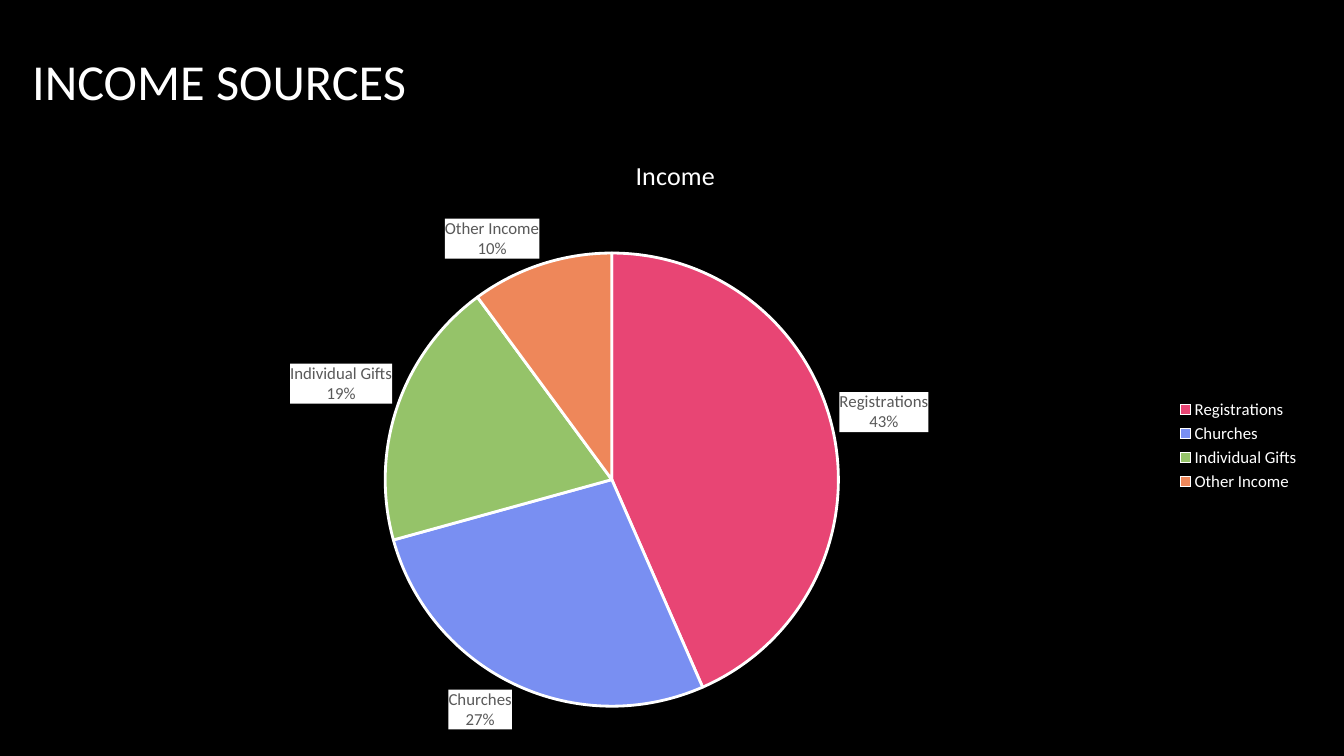
from dataclasses import dataclass

from lxml import etree
from pptx import Presentation
from pptx.chart.chart import Chart
from pptx.chart.data import CategoryChartData
from pptx.dml.color import RGBColor
from pptx.enum.chart import XL_CHART_TYPE, XL_LABEL_POSITION, XL_LEGEND_POSITION
from pptx.enum.text import MSO_ANCHOR
from pptx.oxml import parse_xml
from pptx.oxml.ns import nsdecls, qn
from pptx.slide import Slide
from pptx.text.text import Font
from pptx.util import Pt

PIE = XL_CHART_TYPE.PIE
OUTSIDE_END = XL_LABEL_POSITION.OUTSIDE_END
LEGEND_RIGHT = XL_LEGEND_POSITION.RIGHT
MIDDLE = MSO_ANCHOR.MIDDLE

BLACK = RGBColor(0x00, 0x00, 0x00)
WHITE = RGBColor(0xFF, 0xFF, 0xFF)
GREY = RGBColor(0x59, 0x59, 0x59)
PINK = RGBColor(0xE8, 0x45, 0x74)
BLUE = RGBColor(0x79, 0x8F, 0xF2)
GREEN = RGBColor(0x95, 0xC3, 0x69)
ORANGE = RGBColor(0xEE, 0x87, 0x5A)
FONT_NAME = "Calibri"


@dataclass(frozen=True)
class Source:
    name: str
    share: int
    color: RGBColor


@dataclass(frozen=True)
class Frame:
    left: float
    top: float
    width: float
    height: float

    def lengths(self) -> tuple[Pt, Pt, Pt, Pt]:
        return Pt(self.left), Pt(self.top), Pt(self.width), Pt(self.height)


SOURCES = [
    Source("Registrations", 43, PINK),
    Source("Churches", 27, BLUE),
    Source("Individual Gifts", 19, GREEN),
    Source("Other Income", 10, ORANGE),
]
TITLE_FRAME = Frame(15.84, 0, 797.76, 114.48)
CHART_FRAME = Frame(28.8, 96.5, 907.2, 443.5)
# Pie square as fractions of the chart frame
PIE_AREA = {"x": 0.27, "y": 0.19, "w": 0.36, "h": 0.73}


def set_font(font: Font, size: float, color: RGBColor) -> None:
    font.name = FONT_NAME
    font.size = Pt(size)
    font.bold = False
    font.color.rgb = color


def add_text(page: Slide, text: str, frame: Frame, *, size: float, color: RGBColor) -> None:
    box = page.shapes.add_textbox(*frame.lengths())
    box.text_frame.word_wrap = True
    box.text_frame.vertical_anchor = MIDDLE
    span = box.text_frame.paragraphs[0].add_run()
    span.text = text
    set_font(span.font, size, color)


def place_pie(chart: Chart) -> None:
    """Fix the inner plot area within the chart frame."""
    plot_area = chart.plots[0]._element.getparent()
    for old_layout in plot_area.findall(qn("c:layout")):
        plot_area.remove(old_layout)
    sizes = "".join(f'<c:{key} val="{value}"/>' for key, value in PIE_AREA.items())
    plot_area.insert(0, parse_xml(
        f'<c:layout {nsdecls("c")}><c:manualLayout><c:layoutTarget val="inner"/>'
        f'<c:xMode val="edge"/><c:yMode val="edge"/>{sizes}</c:manualLayout></c:layout>'))


def add_income_chart(page: Slide, sources: list[Source]) -> None:
    data = CategoryChartData()
    data.categories = [source.name for source in sources]
    data.add_series("Income", [source.share for source in sources])
    chart = page.shapes.add_chart(PIE, *CHART_FRAME.lengths(), data).chart
    set_font(chart.font, 10, WHITE)
    place_pie(chart)

    # Heading and legend
    chart.has_title = True
    span = chart.chart_title.text_frame.paragraphs[0].add_run()
    span.text = "Income"
    set_font(span.font, 18.6, WHITE)
    chart.has_legend = True
    chart.legend.position = LEGEND_RIGHT
    chart.legend.include_in_layout = False
    set_font(chart.legend.font, 12, WHITE)

    # Slices
    plot = chart.plots[0]
    plot.vary_by_categories = True
    series = plot.series[0]
    for index, source in enumerate(sources):
        slice_format = series.points[index].format
        slice_format.fill.solid()
        slice_format.fill.fore_color.rgb = source.color
        slice_format.line.color.rgb = WHITE
        slice_format.line.width = Pt(2)

    # Two-line labels on white boxes
    labels = series.data_labels
    set_font(labels.font, 12, GREY)
    labels.position = OUTSIDE_END
    labels.show_category_name = True
    labels.show_percentage = True
    labels.show_value = False
    labels.show_legend_key = False
    element = labels._element
    element.find(qn("c:txPr")).addprevious(parse_xml(
        f'<c:spPr {nsdecls("c", "a")}><a:solidFill><a:srgbClr val="{WHITE}"/>'
        '</a:solidFill><a:ln><a:noFill/></a:ln></c:spPr>'))
    separator = etree.Element(qn("c:separator"))
    separator.text = "\n"
    flags = [child for child in element if etree.QName(child).localname.startswith("show")
             and child.tag != qn("c:showLeaderLines")]
    flags[-1].addnext(separator)


def main() -> None:
    deck = Presentation()
    deck.slide_width, deck.slide_height = Pt(960), Pt(540)
    page = deck.slides.add_slide(deck.slide_layouts[6])
    page.background.fill.solid()
    page.background.fill.fore_color.rgb = BLACK
    add_text(page, "INCOME SOURCES", TITLE_FRAME, size=36, color=WHITE)
    add_income_chart(page, SOURCES)
    deck.save("out.pptx")


if __name__ == "__main__":
    main()
